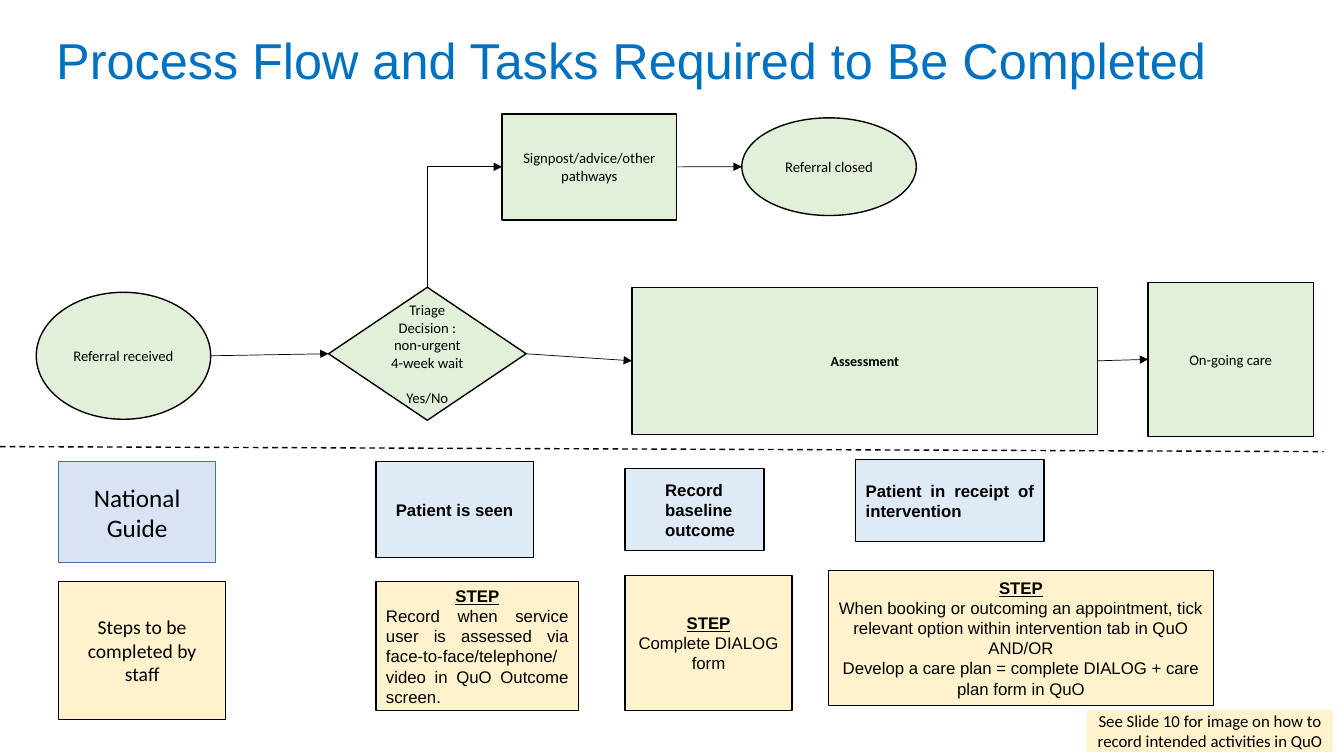
import pptx
import pptx.util
import pptx.dml.color
import pptx.enum.dml
import pptx.enum.shapes
import pptx.enum.text
import pptx.oxml.ns
import lxml.etree

Pt = pptx.util.Pt
RGB = pptx.dml.color.RGBColor
SHAPE = pptx.enum.shapes.MSO_SHAPE
CONNECTOR = pptx.enum.shapes.MSO_CONNECTOR
ALIGN = pptx.enum.text.PP_ALIGN
qn = pptx.oxml.ns.qn

BLACK = RGB(0x00, 0x00, 0x00)
TITLE_BLUE = RGB(0x00, 0x70, 0xC0)
FLOW_GREEN = RGB(0xE2, 0xF0, 0xD9)
GUIDE_BLUE = RGB(0xDE, 0xEB, 0xF7)
HEADING_BLUE = RGB(0xDA, 0xE3, 0xF3)
HEADING_EDGE = RGB(0x43, 0x73, 0x9E)
STEP_YELLOW = RGB(0xFF, 0xF2, 0xCC)


def format_runs(paragraph, size, font, color=BLACK, bold=False, underline=False):
    for run in paragraph.runs:
        run.font.size = Pt(size)
        run.font.name = font
        run.font.color.rgb = color
        run.font.bold = bold
        run.font.underline = underline


def add_box(slide, box, lines, fill, size=12, font="Arial", bold=False,
            align=ALIGN.CENTER, kind=SHAPE.RECTANGLE, edge=BLACK):
    """Filled box with centred text; a line reading STEP becomes its heading."""
    shape = slide.shapes.add_shape(kind, *map(Pt, box))
    shape.shadow.inherit = False
    shape.fill.solid()
    shape.fill.fore_color.rgb = fill
    shape.line.color.rgb = edge
    shape.line.width = Pt(1)
    frame = shape.text_frame
    frame.word_wrap = True
    frame.vertical_anchor = pptx.enum.text.MSO_ANCHOR.MIDDLE
    frame.text = "\n".join(lines)
    for paragraph in frame.paragraphs:
        heading = paragraph.text == "STEP"
        paragraph.alignment = ALIGN.CENTER if heading else align
        format_runs(paragraph, size, font, bold=bold or heading, underline=heading)
    return shape


def add_line(slide, start, end, width, arrow=False):
    line = slide.shapes.add_connector(CONNECTOR.STRAIGHT, *start, *end)
    line.line.color.rgb = BLACK
    line.line.width = Pt(width)
    if arrow:
        lxml.etree.SubElement(line.line._get_or_add_ln(), qn("a:tailEnd"), type="triangle")
    lxml.etree.SubElement(line._element.spPr, qn("a:effectLst"))
    return line


def add_arrow(slide, source, target):
    """Arrow from the right side of source to the left side of target."""
    arrow = add_line(slide,
                     (source.left + source.width, source.top + source.height // 2),
                     (target.left, target.top + target.height // 2), 0.5, arrow=True)
    # Ovals number their connection sites differently, so only other shapes are glued
    if source.auto_shape_type != SHAPE.OVAL:
        arrow.begin_connect(source, 3)
    if target.auto_shape_type != SHAPE.OVAL:
        arrow.end_connect(target, 1)


def add_elbow(slide, source, target):
    """Arrow up from the top of source, then right to the left side of target."""
    x0, y0 = source.left + source.width // 2, source.top
    x1, y1 = target.left, target.top + target.height // 2
    center_x, center_y = (x0 + x1) // 2, (y0 + y1) // 2
    half_rise, half_run = (y0 - y1) // 2, (x1 - x0) // 2
    # The bend is laid out sideways and turned by a quarter
    elbow = add_line(slide, (center_x + half_rise, center_y + half_run),
                     (center_x - half_rise, center_y - half_run), 0.5, arrow=True)
    properties = elbow._element.spPr
    properties.find(qn("a:xfrm")).set("rot", "5400000")
    properties.find(qn("a:prstGeom")).set("prst", "bentConnector2")


def add_title(slide, box):
    title = slide.shapes.add_textbox(*map(Pt, box)).text_frame
    title.word_wrap = True
    title.text = "Process Flow and Tasks Required to Be Completed"
    format_runs(title.paragraphs[0], 36, "Arial", TITLE_BLUE)


def add_process_flow(slide, left, top):
    def node(x, y, width, height, lines, kind=SHAPE.RECTANGLE, size=10.5, bold=False):
        return add_box(slide, (left + x, top + y, width, height), lines, FLOW_GREEN,
                       size, "Calibri", bold, kind=kind)

    # Main path
    received = node(0, 127.4, 124.6, 90.7, ["Referral received"], SHAPE.OVAL)
    triage = node(208.8, 123.8, 141.1, 95,
                  ["Triage Decision : non-urgent 4-week wait", "Yes/No"],
                  SHAPE.FLOWCHART_DECISION)
    triage.text_frame.paragraphs[1].space_before = Pt(12.8)
    assessment = node(425.5, 123.8, 332.6, 105.1, ["Assessment"], size=10, bold=True)
    ongoing = node(794.2, 120.2, 118.1, 110.2, ["On-going care"])

    # Branch for referrals that go elsewhere
    signpost = node(332.7, 0, 124.6, 75.6, ["Signpost/advice/other pathways"],
                    SHAPE.FLOWCHART_PROCESS)
    closed = node(504, 2.8, 124.6, 69.8, ["Referral closed"], SHAPE.OVAL)

    for source, target in [(received, triage), (triage, assessment),
                           (assessment, ongoing), (signpost, closed)]:
        add_arrow(slide, source, target)
    add_elbow(slide, triage, signpost)


def add_divider(slide, left, top, width, drop):
    divider = add_line(slide, (Pt(left), Pt(top)), (Pt(left + width), Pt(top + drop)), 1)
    divider.line.dash_style = pptx.enum.dml.MSO_LINE.DASH


def add_national_guide(slide, left, top):
    add_box(slide, (left, top + 1.5, 112.3, 72), ["National Guide"], HEADING_BLUE,
            18, "Calibri", edge=HEADING_EDGE)
    add_box(slide, (left + 226.8, top + 1.5, 112.3, 68.4), ["Patient is seen"],
            GUIDE_BLUE, bold=True)
    baseline = add_box(slide, (left + 404.6, top + 6.5, 99.4, 58.3),
                       ["Record baseline outcome"], GUIDE_BLUE, bold=True, align=ALIGN.LEFT)
    baseline.text_frame.paragraphs[0]._p.get_or_add_pPr().set("marL", str(Pt(21.6)))
    add_box(slide, (left + 569.5, top, 134.6, 58.3), ["Patient in receipt of intervention"],
            GUIDE_BLUE, bold=True, align=ALIGN.JUSTIFY)


def add_staff_steps(slide, left, top):
    add_box(slide, (left, top + 7.9, 119.5, 98.6), ["Steps to be completed by staff"],
            STEP_YELLOW, 14, "Calibri")
    add_box(slide, (left + 226.8, top + 7.9, 144.7, 92.2),
            ["STEP", "Record when service user is assessed via "
             "face-to-face/telephone/ video in QuO Outcome screen."],
            STEP_YELLOW, align=ALIGN.JUSTIFY)
    add_box(slide, (left + 404.6, top + 3.6, 119.5, 96.5), ["STEP", "Complete DIALOG form"],
            STEP_YELLOW)
    add_box(slide, (left + 550, top, 275, 96.5),
            ["STEP", "When booking or outcoming an appointment, tick relevant option "
             "within intervention tab in QuO", "AND/OR",
             "Develop a care plan = complete DIALOG + care plan form in QuO"], STEP_YELLOW)


def add_slide_note(slide, box):
    add_box(slide, box, ["See Slide 10 for image on how to record intended activities in QuO"],
            STEP_YELLOW, font="Calibri", edge=STEP_YELLOW)


def main():
    deck = pptx.Presentation()
    deck.slide_width, deck.slide_height = Pt(960), Pt(540)
    slide = deck.slides.add_slide(deck.slide_layouts[6])
    add_title(slide, (33.1, 17.3, 873.4, 51.1))
    add_process_flow(slide, 25.9, 81.4)
    add_divider(slide, 0, 319, 945.4, 3.6)
    add_national_guide(slide, 41.8, 328.3)
    add_staff_steps(slide, 41.8, 407.5)
    add_slide_note(slide, (776.9, 507.6, 175, 28.8))
    deck.save("out.pptx")


if __name__ == "__main__":
    main()
